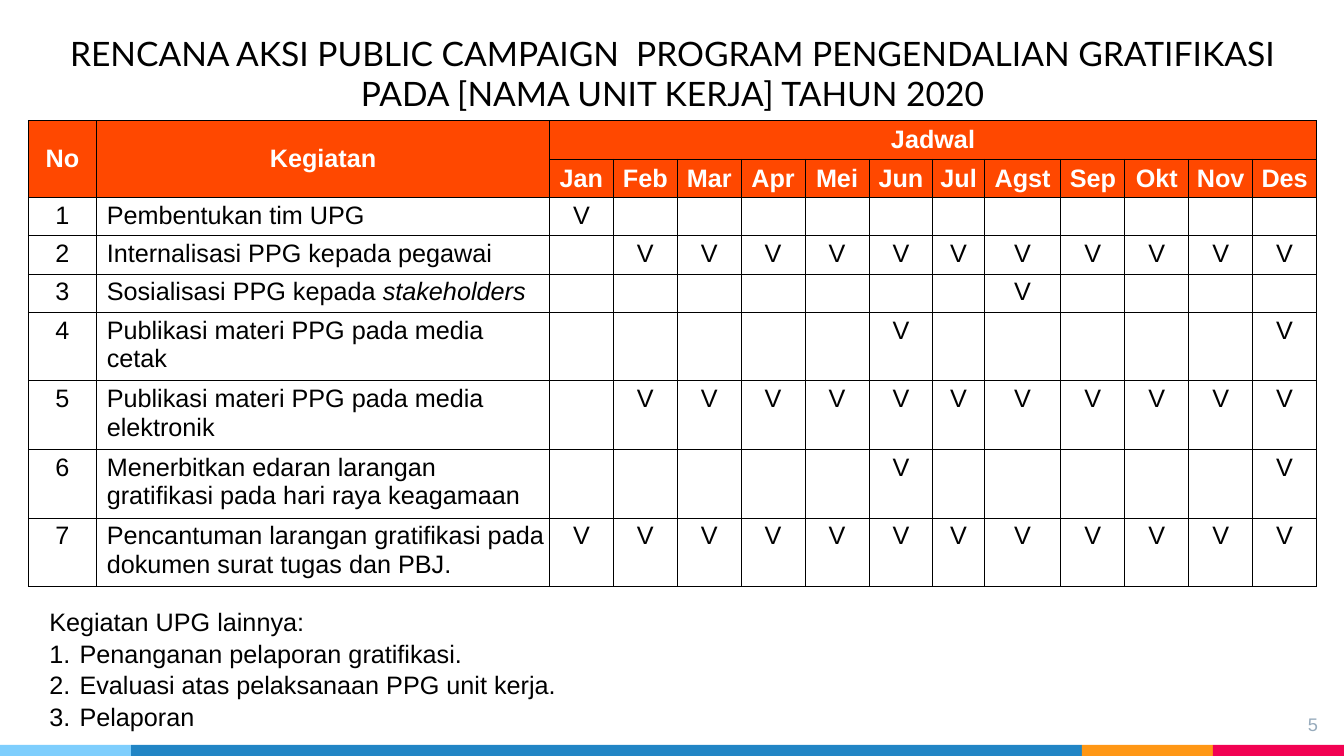
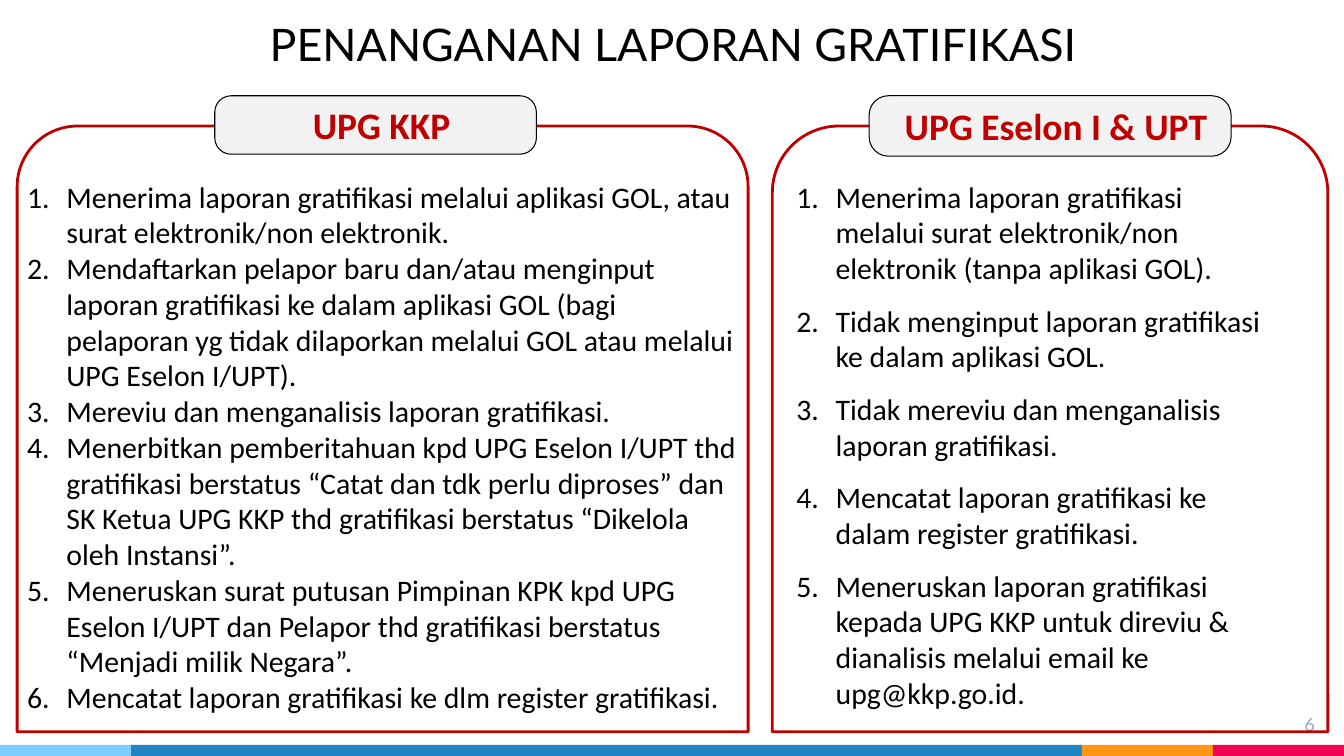
from lxml.etree import SubElement
from pptx import Presentation
from pptx.dml.color import RGBColor
from pptx.enum.shapes import MSO_SHAPE
from pptx.enum.text import MSO_ANCHOR, PP_ALIGN
from pptx.oxml.ns import qn
from pptx.util import Inches, Pt

BLACK, WHITE, RED = "000000", "FFFFFF", "C00000"
ORANGE, LIGHT_GREY, PAGE_GREY = "FF4800", "F2F2F2", "97ABBC"
TITLE_FONT = "Lato"
BANDS = [("7ECEFD", 1.3), ("2185C5", 9.43), ("FF9715", 1.3), ("F20253", 1.3)]

MONTHS = ["Jan", "Feb", "Mar", "Apr", "Mei", "Jun",
          "Jul", "Agst", "Sep", "Okt", "Nov", "Des"]
PLAN_TITLE = ("RENCANA AKSI PUBLIC CAMPAIGN  PROGRAM PENGENDALIAN GRATIFIKASI "
              "PADA [NAMA UNIT KERJA] TAHUN 2020")
ACTIVITIES = [
    ("Pembentukan tim UPG", "", ["Jan"]),
    ("Internalisasi PPG kepada pegawai", "", MONTHS[1:]),
    ("Sosialisasi PPG kepada ", "stakeholders", ["Agst"]),
    ("Publikasi materi PPG pada media cetak", "", ["Jun", "Des"]),
    ("Publikasi materi PPG pada media elektronik", "", MONTHS[1:]),
    ("Menerbitkan edaran larangan gratifikasi pada hari raya keagamaan", "",
     ["Jun", "Des"]),
    ("Pencantuman larangan gratifikasi pada dokumen surat tugas dan PBJ.", "",
     MONTHS),
]
OTHER_ACTIVITIES = [
    "Penanganan pelaporan gratifikasi.",
    "Evaluasi atas pelaksanaan PPG unit kerja.",
    "Pelaporan",
]
KKP_TASKS = [
    "Menerima laporan gratifikasi melalui aplikasi GOL, atau surat "
    "elektronik/non elektronik.",
    "Mendaftarkan pelapor baru dan/atau menginput laporan gratifikasi ke dalam "
    "aplikasi GOL (bagi pelaporan yg tidak dilaporkan melalui GOL atau melalui "
    "UPG Eselon I/UPT).",
    "Mereviu dan menganalisis laporan gratifikasi.",
    "Menerbitkan pemberitahuan kpd UPG Eselon I/UPT thd gratifikasi berstatus "
    "“Catat dan tdk perlu diproses” dan SK Ketua UPG KKP thd gratifikasi "
    "berstatus “Dikelola oleh Instansi”.",
    "Meneruskan surat putusan Pimpinan KPK kpd UPG Eselon I/UPT dan Pelapor thd "
    "gratifikasi berstatus “Menjadi milik Negara”.",
    "Mencatat laporan gratifikasi ke dlm register gratifikasi.",
]
ESELON_TASKS = [
    "Menerima laporan gratifikasi melalui surat elektronik/non elektronik "
    "(tanpa aplikasi GOL).",
    "Tidak menginput laporan gratifikasi ke dalam aplikasi GOL.",
    "Tidak mereviu dan menganalisis laporan gratifikasi.",
    "Mencatat laporan gratifikasi ke dalam register gratifikasi.",
    "Meneruskan laporan gratifikasi kepada UPG KKP untuk direviu & dianalisis "
    "melalui email ke upg@kkp.go.id.",
]


def rgb(value):
    """Turn a hex string into a colour."""
    return RGBColor.from_string(value)


def style(paragraph, font, size, color=BLACK, bold=False, align=PP_ALIGN.LEFT):
    """Set the font and alignment of a paragraph."""
    paragraph.alignment = align
    paragraph.font.name = font
    paragraph.font.size = Pt(size)
    paragraph.font.bold = bold
    paragraph.font.color.rgb = rgb(color)


def indent(paragraph, left, first=0):
    """Set the left and first-line indents in inches."""
    properties = paragraph._p.get_or_add_pPr()
    properties.set("marL", str(Inches(left)))
    properties.set("indent", str(Inches(first)))


def number(paragraph, hang):
    """Number a paragraph with a hanging indent."""
    indent(paragraph, hang, -hang)
    SubElement(paragraph._p.get_or_add_pPr(), qn("a:buAutoNum"),
               type="arabicPeriod")


def set_margins(frame, horizontal, vertical):
    """Set the inner margins of a cell or text frame."""
    frame.margin_left = frame.margin_right = Inches(horizontal)
    frame.margin_top = frame.margin_bottom = Inches(vertical)


def add_text(slide, box, lines):
    """Add a wrapping text box with one paragraph per line."""
    frame = slide.shapes.add_textbox(*map(Inches, box)).text_frame
    frame.word_wrap = True
    frame.text = "\n".join(lines)
    return frame


def add_box(slide, preset, box, fill=None, line=None, width=0.75, radii=()):
    """Add a flat preset shape with optional fill, outline and corner radii."""
    shape = slide.shapes.add_shape(preset, *map(Inches, box))
    shape.shadow.inherit = False
    if fill:
        shape.fill.solid()
        shape.fill.fore_color.rgb = rgb(fill)
    else:
        shape.fill.background()
    if line:
        shape.line.color.rgb = rgb(line)
        shape.line.width = Pt(width)
    else:
        shape.line.fill.background()
    for index, radius in enumerate(radii):
        shape.adjustments[index] = radius
    return shape


def add_base(deck, page, font, margin):
    """Add a slide with the footer bands and page number."""
    slide = deck.slides.add_slide(deck.slide_layouts[6])
    left = 0
    for color, width in BANDS:
        add_box(slide, MSO_SHAPE.RECTANGLE, (left, 7.39, width, 0.11), color)
        left += width
    footer = add_text(slide, (12.37, 6.96, 0.8, 0.46), [str(page)])
    set_margins(footer, margin, margin)
    footer.vertical_anchor = MSO_ANCHOR.MIDDLE
    style(footer.paragraphs[0], font, 13, PAGE_GREY, align=PP_ALIGN.RIGHT)
    return slide


def add_borders(cell, sides):
    """Draw thin black borders on the given sides of a cell."""
    properties = cell._tc.get_or_add_tcPr()
    for side in sides:
        border = SubElement(properties, qn(f"a:ln{side}"), w=str(Pt(0.75)))
        fill = SubElement(border, qn("a:solidFill"))
        SubElement(fill, qn("a:srgbClr"), val=BLACK)


def format_cell(cell, header=False, align=PP_ALIGN.CENTER):
    """Give a schedule cell its borders, fill, margins and font."""
    add_borders(cell, "LRTB")
    set_margins(cell, 0.04, 0.04)
    if header:
        cell.fill.solid()
        cell.fill.fore_color.rgb = rgb(ORANGE)
        cell.vertical_anchor = MSO_ANCHOR.MIDDLE
    else:
        cell.fill.background()
    paragraph = cell.text_frame.paragraphs[0]
    style(paragraph, "Arial", 18, WHITE if header else BLACK, header, align)
    paragraph.space_before = paragraph.space_after = Pt(2)


def add_plan_title(table):
    """Fill the merged title row above the schedule."""
    for cell in table.rows[0].cells:
        add_borders(cell, "B")
        cell.fill.background()
    title = table.cell(0, 0)
    title.merge(table.cell(0, len(table.columns) - 1))
    title.text = PLAN_TITLE
    set_margins(title, 0.13, 0.07)
    paragraph = title.text_frame.paragraphs[0]
    style(paragraph, TITLE_FONT, 24, align=PP_ALIGN.CENTER)
    paragraph.space_before = paragraph.space_after = Pt(1)


def add_schedule(slide):
    """Add the table of activities by month."""
    heights = [0.93] + [0.36] * 5 + [0.64] * 4
    special = {"Jul": 0.51, "Agst": 0.76}
    total, lead = 12.78, [0.68, 4.49]
    month_width = ((total - sum(lead) - sum(special.values()))
                   / (len(MONTHS) - len(special)))
    widths = lead + [special.get(month, month_width) for month in MONTHS]
    table = slide.shapes.add_table(
        len(heights), len(widths), Inches(0.28), Inches(0.26),
        Inches(total), Inches(sum(heights))).table
    table.first_row = table.horz_banding = False
    for column, width in zip(table.columns, widths):
        column.width = Inches(width)
    for row, height in zip(table.rows, heights):
        row.height = Inches(height)

    add_plan_title(table)
    for column, heading in enumerate(["No", "Kegiatan", "Jadwal"]):
        table.cell(1, column).text = heading
    for column, month in enumerate(MONTHS, 2):
        table.cell(2, column).text = month
    for row in (1, 2):
        for cell in table.rows[row].cells:
            format_cell(cell, header=True)
    for column in (0, 1):
        table.cell(1, column).merge(table.cell(2, column))
    table.cell(1, 2).merge(table.cell(1, len(widths) - 1))

    for order, (activity, foreign_word, active) in enumerate(ACTIVITIES, 1):
        order_cell, activity_cell, *month_cells = table.rows[order + 2].cells
        order_cell.text = str(order)
        format_cell(order_cell)
        activity_cell.text = activity
        format_cell(activity_cell, align=PP_ALIGN.LEFT)
        paragraph = activity_cell.text_frame.paragraphs[0]
        indent(paragraph, 0.06)
        if foreign_word:
            run = paragraph.add_run()
            run.text = foreign_word
            run.font.italic = True
        for month, cell in zip(MONTHS, month_cells):
            cell.text = "V" if month in active else ""
            format_cell(cell)


def add_tasks(slide, box, tasks, gap):
    """Add a numbered list of tasks."""
    for paragraph in add_text(slide, box, tasks).paragraphs:
        style(paragraph, "Calibri", 21.3)
        paragraph.space_after = Pt(gap)
        number(paragraph, 0.39)


def add_panel(slide, box, radius):
    """Add a red outline with rounded top corners."""
    add_box(slide, MSO_SHAPE.ROUND_2_SAME_RECTANGLE, box, line=RED, width=2,
            radii=(radius, 0))


def add_label(slide, box, unit, radius):
    """Add the rounded heading on top of a panel."""
    label = add_box(slide, MSO_SHAPE.ROUNDED_RECTANGLE, box, LIGHT_GREY, BLACK,
                    radii=(radius,))
    frame = label.text_frame
    frame.text = unit
    frame.vertical_anchor = MSO_ANCHOR.MIDDLE
    style(frame.paragraphs[0], "Calibri", 26.7, RED, True, PP_ALIGN.CENTER)
    indent(frame.paragraphs[0], 0.12)


def build_plan(deck):
    """Build the action plan slide."""
    slide = add_base(deck, 5, "Arial", 0.1)
    add_schedule(slide)
    others = add_text(slide, (0.39, 5.95, 12.55, 1.31),
                      ["Kegiatan UPG lainnya:"] + OTHER_ACTIVITIES)
    for paragraph in others.paragraphs:
        style(paragraph, "Arial", 18)
        paragraph.line_spacing = 1.05
    for paragraph in others.paragraphs[1:]:
        number(paragraph, 0.3)


def build_handling(deck):
    """Build the report handling slide."""
    slide = add_base(deck, 6, TITLE_FONT, 0.13)
    title = add_text(slide, (1.97, 0.12, 9.42, 0.69),
                     ["PENANGANAN LAPORAN GRATIFIKASI"])
    style(title.paragraphs[0], TITLE_FONT, 32, align=PP_ALIGN.CENTER)
    add_panel(slide, (0.17, 1.25, 7.25, 6.01), 0.1)
    add_panel(slide, (7.66, 1.25, 5.51, 6.01), 0.12)
    add_tasks(slide, (0.17, 1.72, 7.25, 5.81), KKP_TASKS, 0)
    add_tasks(slide, (7.8, 1.72, 4.83, 5.06), ESELON_TASKS, 12)
    add_label(slide, (2.13, 0.95, 3.19, 0.58), "UPG KKP", 0.28)
    add_label(slide, (8.62, 0.95, 3.59, 0.6), "UPG Eselon I & UPT", 0.32)


def main():
    """Build and save the presentation."""
    deck = Presentation()
    deck.slide_width, deck.slide_height = Inches(13.33), Inches(7.5)
    build_plan(deck)
    build_handling(deck)
    deck.save("out.pptx")


if __name__ == "__main__":
    main()
